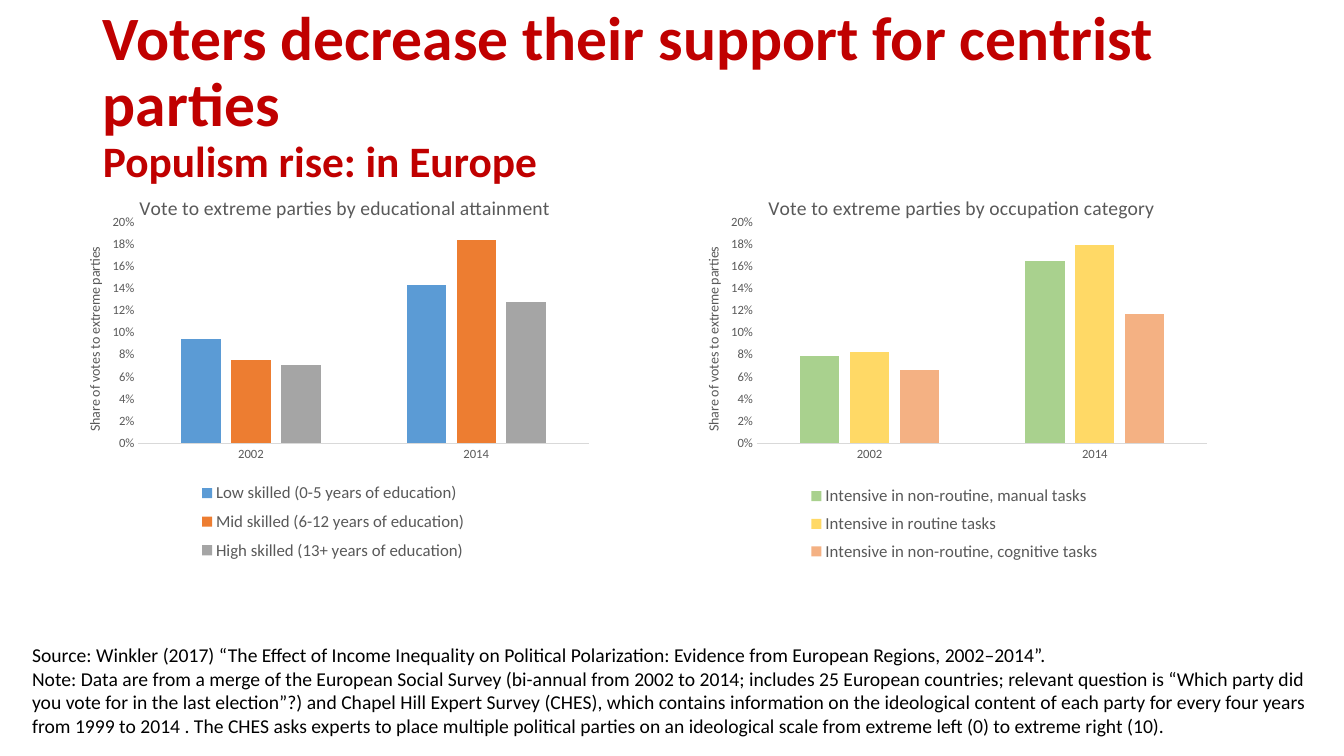
from lxml.etree import SubElement, Element
from pptx import Presentation
from pptx.chart.data import CategoryChartData
from pptx.dml.color import RGBColor
from pptx.enum.chart import XL_CHART_TYPE as ChartType
from pptx.enum.chart import XL_LEGEND_POSITION as LegendPosition
from pptx.enum.chart import XL_TICK_MARK as TickMark
from pptx.enum.text import MSO_ANCHOR as Anchor
from pptx.enum.text import MSO_AUTO_SIZE as AutoSize
from pptx.oxml.ns import qn
from pptx.util import Cm, Pt

RED = RGBColor(0xC0, 0x00, 0x00)
BLACK = RGBColor(0x00, 0x00, 0x00)
GREY = RGBColor(0x59, 0x59, 0x59)
AXIS_GREY = RGBColor(0xD9, 0xD9, 0xD9)
BLUE = RGBColor(0x5B, 0x9B, 0xD5)
ORANGE = RGBColor(0xED, 0x7D, 0x31)
SILVER = RGBColor(0xA5, 0xA5, 0xA5)
GREEN = RGBColor(0xA9, 0xD1, 0x8E)
YELLOW = RGBColor(0xFF, 0xD9, 0x66)
PEACH = RGBColor(0xF4, 0xB1, 0x83)

YEARS = ["2002", "2014"]
PLOT_AREA = (0.115, 0.126, 0.855, 0.538)
SOURCE = (
    "Source: Winkler (2017) “The Effect of Income Inequality on Political "
    "Polarization: Evidence from European Regions, 2002–2014”."
)
NOTE = (
    "Note: Data are from a merge of the European Social Survey (bi-annual from "
    "2002 to 2014; includes 25 European countries; relevant question is “Which "
    "party did you vote for in the last election”?) and Chapel Hill Expert Survey "
    "(CHES), which contains information on the ideological content of each party "
    "for every four years from 1999 to 2014 . The CHES asks experts to place "
    "multiple political parties on an ideological scale from extreme left (0) to "
    "extreme right (10)."
)
EDUCATION = [
    ("Low skilled (0-5 years of education)", (0.094, 0.143), BLUE),
    ("Mid skilled (6-12 years of education)", (0.075, 0.184), ORANGE),
    ("High skilled (13+ years of education)", (0.071, 0.128), SILVER),
]
OCCUPATION = [
    ("Intensive in non-routine, manual tasks", (0.079, 0.165), GREEN),
    ("Intensive in routine tasks", (0.082, 0.179), YELLOW),
    ("Intensive in non-routine, cognitive tasks", (0.066, 0.117), PEACH),
]


def place(part, index, position, inner=False):
    """Give a chart part a manual layout, in fractions of the chart."""
    for old in part.findall(qn("c:layout")):
        part.remove(old)
    layout = Element(qn("c:layout"))
    manual = SubElement(layout, qn("c:manualLayout"))
    settings = [("layoutTarget", "inner")] if inner else []
    settings += [("xMode", "edge"), ("yMode", "edge")]
    settings += zip("xywh", position)
    for tag, value in settings:
        SubElement(manual, qn(f"c:{tag}")).set("val", str(value))
    part.insert(index, layout)


class SlideBuilder:
    font_name = "Calibri"

    def __init__(self, slide):
        self.slide = slide

    def style(self, font, size, color, bold=False):
        font.name = self.font_name
        font.size = Pt(size)
        font.bold = bold
        font.color.rgb = color

    def run(self, paragraph, text, size, color, bold=False):
        run = paragraph.add_run()
        run.text = text
        self.style(run.font, size, color, bold)

    def title(self, heading, subheading, left, top, width, height):
        title = self.slide.shapes.title
        title.left, title.top, title.width, title.height = left, top, width, height
        frame = title.text_frame
        frame.auto_size = AutoSize.NONE
        frame.vertical_anchor = Anchor.MIDDLE
        paragraph = frame.paragraphs[0]
        paragraph.line_spacing = 0.9
        paragraph.alignment = 1
        self.run(paragraph, heading, 44, RED, True)
        paragraph.add_line_break()
        self.run(paragraph, subheading, 31, RED, True)

    def notes(self, texts, left, top, width, height):
        frame = self.slide.shapes.add_textbox(left, top, width, height).text_frame
        frame.word_wrap = True
        frame.auto_size = AutoSize.SHAPE_TO_FIT_TEXT
        for index, text in enumerate(texts):
            paragraph = frame.add_paragraph() if index else frame.paragraphs[0]
            self.run(paragraph, text, 14, BLACK)

    def chart_label(self, label, text, size, position):
        self.run(label.text_frame.paragraphs[0], text, size, GREY)
        place(label._element, 1, position)

    def column_chart(self, heading, series, left, heading_at, legend_at):
        data = CategoryChartData(number_format="0%")
        data.categories = YEARS
        for name, shares, _ in series:
            data.add_series(name, shares)
        chart = self.slide.shapes.add_chart(
            ChartType.COLUMN_CLUSTERED, left, Cm(4.29), Cm(13.28), Cm(10.36), data
        ).chart
        self.style(chart.font, 10, BLACK)
        chart.has_title = True
        self.chart_label(chart.chart_title, heading, 14, heading_at)
        place(chart._chartSpace.chart.plotArea, 0, PLOT_AREA, inner=True)

        # Columns
        plot = chart.plots[0]
        plot.gap_width = 219
        plot.overlap = -27
        plot.vary_by_categories = False
        for columns, (_, _, color) in zip(plot.series, series):
            columns.format.fill.solid()
            columns.format.fill.fore_color.rgb = color

        # Axes
        years, shares = chart.category_axis, chart.value_axis
        for axis in (years, shares):
            axis.major_tick_mark = axis.minor_tick_mark = TickMark.NONE
            axis.has_major_gridlines = False
            self.style(axis.tick_labels.font, 9, GREY)
        years.format.line.color.rgb = AXIS_GREY
        years.format.line.width = Pt(0.75)
        shares.format.line.fill.background()
        shares.minimum_scale, shares.maximum_scale = 0, 0.2
        shares.major_unit = 0.02
        shares.tick_labels.number_format = "0%"
        shares.tick_labels.number_format_is_linked = False
        self.chart_label(
            shares.axis_title, "Share of votes to extreme parties", 10, (0.01, 0.18)
        )

        # Legend
        chart.has_legend = True
        chart.legend.position = LegendPosition.BOTTOM
        chart.legend.include_in_layout = False
        self.style(chart.legend.font, 12, GREY)
        place(chart.legend._element, 1, legend_at)


def main():
    deck = Presentation()
    deck.slide_width, deck.slide_height = Cm(33.87), Cm(19.05)
    builder = SlideBuilder(deck.slides.add_slide(deck.slide_layouts[5]))

    # Heading
    builder.title(
        "Voters decrease their support for centrist parties",
        "Populism rise: in Europe",
        Cm(2.34), Cm(0.61), Cm(30.43), Cm(3.68),
    )

    # Source and note
    builder.notes([SOURCE, NOTE], Cm(0.56), Cm(16.08), Cm(32.74), Cm(2.64))

    # Charts
    builder.column_chart(
        "Vote to extreme parties by educational attainment", EDUCATION,
        Cm(1.96), (0.11, 0.05), (0.22, 0.74, 0.53, 0.23),
    )
    builder.column_chart(
        "Vote to extreme parties by occupation category", OCCUPATION,
        Cm(17.55), (0.13, 0.05), (0.21, 0.75, 0.56, 0.22),
    )
    deck.save("out.pptx")


if __name__ == "__main__":
    main()
